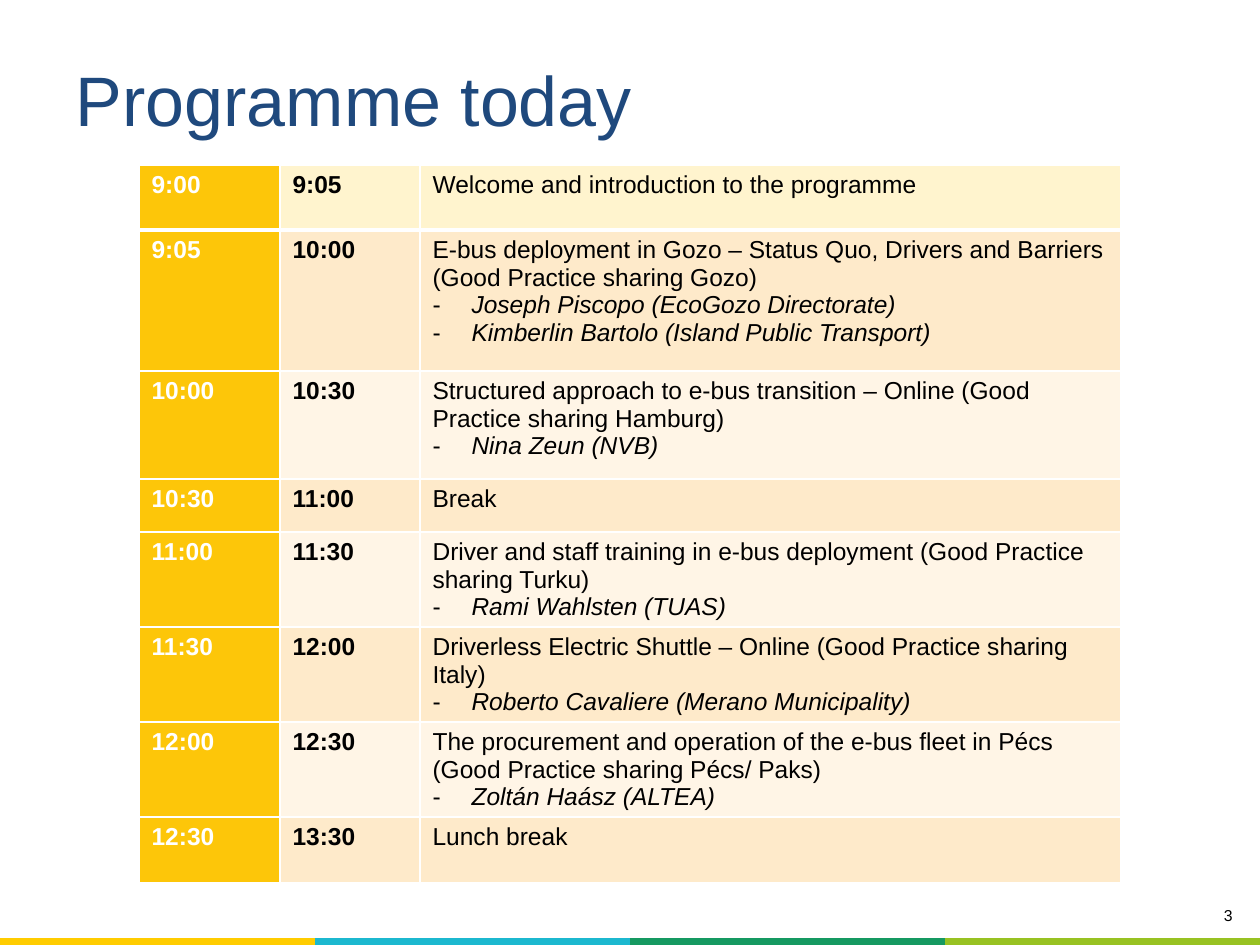
from dataclasses import dataclass

from lxml import etree
from pptx import Presentation
from pptx import util as u
from pptx.dml.color import RGBColor
from pptx.enum import text
from pptx.oxml.ns import qn

PX = 914400 // 126


@dataclass(frozen=True)
class Theme:
    font: str = "Arial"
    title: str = "1F497D"
    ink: str = "000000"
    white: str = "FFFFFF"
    start: str = "FDC609"
    first_row: str = "FFF4CE"
    bands: tuple = ("FFF5E6", "FEEACA")
    strip: tuple = ("FFCC00", "1CB8CF", "159961", "98C222")
    title_pt: int = 40
    body_pt: int = 14
    number_pt: int = 9


T = Theme()

# start, end, row height in px, topic, speakers
SESSIONS = [
    ("9:00", "9:05", 65, "Welcome and introduction to the programme", []),
    ("9:05", "10:00", 141,
     "E-bus deployment in Gozo – Status Quo, Drivers and Barriers (Good Practice sharing Gozo)",
     ["Joseph Piscopo (EcoGozo Directorate)", "Kimberlin Bartolo (Island Public Transport)"]),
    ("10:00", "10:30", 108,
     "Structured approach to e-bus transition – Online (Good Practice sharing Hamburg)",
     ["Nina Zeun (NVB)"]),
    ("10:30", "11:00", 53, "Break", []),
    ("11:00", "11:30", 95,
     "Driver and staff training in e-bus deployment (Good Practice sharing Turku)",
     ["Rami Wahlsten (TUAS)"]),
    ("11:30", "12:00", 95,
     "Driverless Electric Shuttle – Online (Good Practice sharing Italy)",
     ["Roberto Cavaliere (Merano Municipality)"]),
    ("12:00", "12:30", 95,
     "The procurement and operation of the e-bus fleet in Pécs (Good Practice sharing Pécs/ Paks)",
     ["Zoltán Haász (ALTEA)"]),
    ("12:30", "13:30", 66, "Lunch break", []),
]


def px(*lengths):
    return [u.Emu(n * PX) for n in lengths]


def rgb(code):
    return RGBColor.from_string(code)


def write(p, words, size=T.body_pt, color=T.ink, bold=False, italic=False,
          align=text.PP_ALIGN.LEFT):
    p.alignment = align
    r = p.add_run()
    r.text = words
    f = r.font
    f.name, f.size, f.bold, f.italic = T.font, u.Pt(size), bold, italic
    f.color.rgb = rgb(color)


def add_dash(p, indent=39):
    """Give the paragraph a hanging dash bullet."""
    pPr = p._p.get_or_add_pPr()
    pPr.set("marL", str(indent * PX))
    pPr.set("indent", str(-indent * PX))
    color = etree.SubElement(pPr, qn("a:buClr"))
    etree.SubElement(color, qn("a:srgbClr"), val=T.ink)
    etree.SubElement(pPr, qn("a:buFont"), typeface=T.font)
    etree.SubElement(pPr, qn("a:buChar"), char="-")


def style_cell(cell, fill, top=1, bottom=1, sides=1):
    """Set white borders, in points (0 for none), and then the fill."""
    tcPr = cell._tc.get_or_add_tcPr()
    for side, width in (("L", sides), ("R", sides), ("T", top), ("B", bottom)):
        ln = etree.SubElement(tcPr, qn(f"a:ln{side}"), w=str(u.Pt(width)))
        if width:
            solid = etree.SubElement(ln, qn("a:solidFill"))
            etree.SubElement(solid, qn("a:srgbClr"), val=T.white)
        else:
            etree.SubElement(ln, qn("a:noFill"))
    cell.fill.solid()
    cell.fill.fore_color.rgb = rgb(fill)


def add_plain_table(s, box, rows, cols):
    tbl = s.shapes.add_table(rows, cols, *px(*box)).table
    tbl.first_row = tbl.horz_banding = False
    return tbl


def add_title(s, box, words):
    sp = s.shapes.title
    sp.left, sp.top, sp.width, sp.height = px(*box)
    tf = sp.text_frame
    tf.word_wrap = True
    tf.auto_size = text.MSO_AUTO_SIZE.NONE
    tf.vertical_anchor = text.MSO_ANCHOR.MIDDLE
    tf.margin_left, tf.margin_top, tf.margin_right, tf.margin_bottom = px(13, 13, 13, 13)
    write(tf.paragraphs[0], words, size=T.title_pt, color=T.title)


def add_programme(s, box):
    left, top, width, height = box
    tbl = add_plain_table(s, box, len(SESSIONS), 3)
    time_width = width // 7
    for col, w in zip(tbl.columns, px(time_width + 1, time_width, width - 2 * time_width - 1)):
        col.width = w
    for i, (start, end, row_height, topic, speakers) in enumerate(SESSIONS):
        tbl.rows[i].height = px(row_height)[0]
        band = T.bands[i % 2] if i else T.first_row
        cells = [tbl.cell(i, j) for j in range(3)]
        for cell, fill in zip(cells, (T.start, band, band)):
            style_cell(cell, fill, top=3 if i == 1 else 1, bottom=1 if i else 3)
            cell.margin_bottom = 0
        first, second, third = (cell.text_frame for cell in cells)
        write(first.paragraphs[0], start, color=T.white, bold=True)
        write(second.paragraphs[0], end, bold=True)
        write(third.paragraphs[0], topic)
        for speaker in speakers:
            p = third.add_paragraph()
            add_dash(p)
            write(p, speaker, italic=True)


def add_page_number(s, box, number):
    tf = s.shapes.add_textbox(*px(*box)).text_frame
    tf.word_wrap = True
    write(tf.paragraphs[0], number, size=T.number_pt, align=text.PP_ALIGN.RIGHT)


def add_colour_strip(s, box):
    tbl = add_plain_table(s, box, 1, len(T.strip))
    for cell, color in zip(tbl.iter_cells(), T.strip):
        style_cell(cell, color, top=0, bottom=0, sides=0)


def main():
    prs = Presentation()
    prs.slide_width, prs.slide_height = px(1260, 945)
    s = prs.slides.add_slide(prs.slide_layouts[5])
    add_colour_strip(s, (0, 938, 1260, 21))
    add_page_number(s, (997, 900, 248, 38), "3")
    add_title(s, (63, 60, 1134, 77), "Programme today")
    add_programme(s, (139, 165, 982, sum(row[2] for row in SESSIONS)))
    prs.save("out.pptx")


if __name__ == "__main__":
    main()
